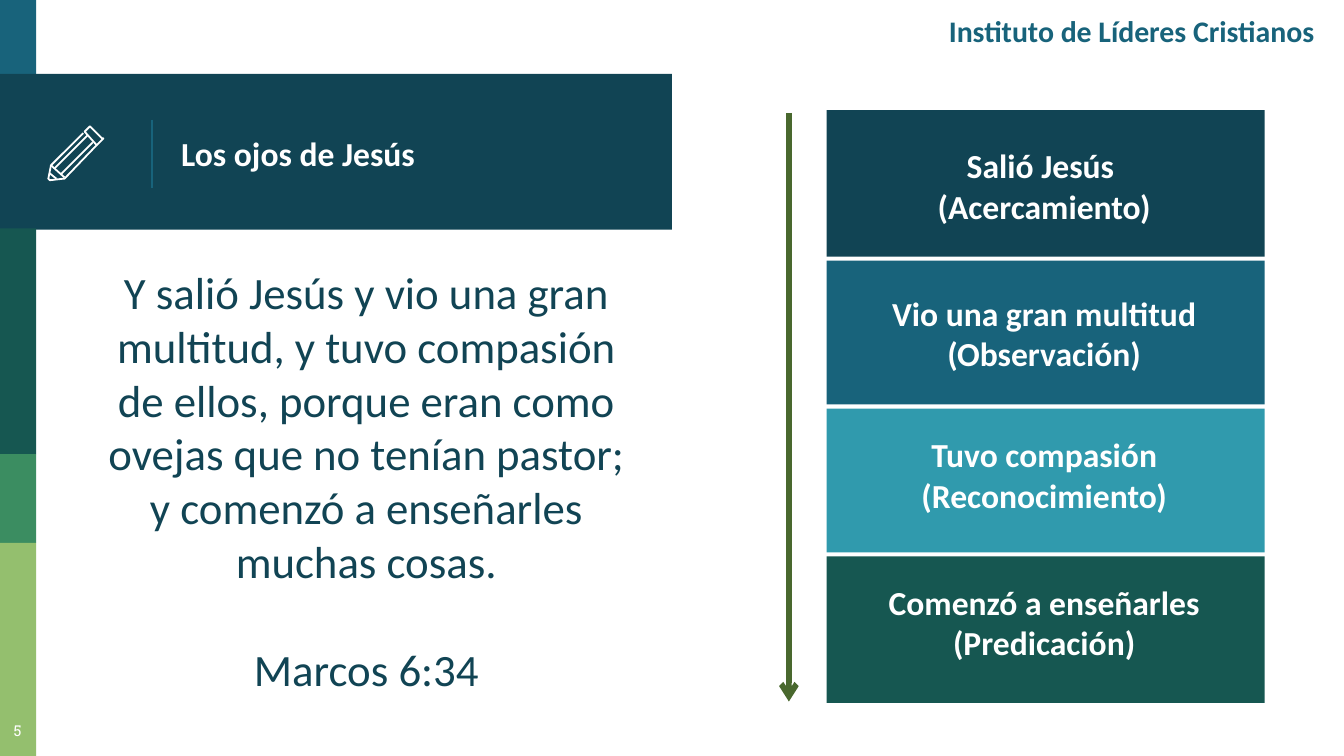
from pptx import Presentation
from pptx.dml.color import RGBColor
from pptx.enum.shapes import MSO_CONNECTOR, MSO_SHAPE
from pptx.enum.text import MSO_ANCHOR, PP_ALIGN
from pptx.oxml.ns import qn
from pptx.util import Inches, Pt
from lxml.etree import SubElement

THEME = {
    "navy": "114454", "blue": "18637B", "teal": "309AAD", "pine": "165751",
    "green": "3B8D61", "lime": "94BF6E", "olive": "49682E", "white": "FFFFFF",
    "font": "Calibri", "slab": "Roboto Slab",
    "verse": 24, "label": 18, "brand": 16, "page": 8,
}

TITLE = "Los ojos de Jesús"
BRAND = "Instituto de Líderes Cristianos"
PAGE = "5"
VERSE = [
    "Y salió Jesús y vio una gran multitud, y tuvo compasión de ellos, "
    "porque eran como ovejas que no tenían pastor; y comenzó a enseñarles "
    "muchas cosas.",
    "Marcos 6:34",
]
STEPS = [
    ("Salió Jesús ", "(Acercamiento)", "navy", 1.09, 0.82),
    ("Vio una gran multitud", "(Observación)", "blue", 1.07, 1.92),
    ("Tuvo compasión", "(Reconocimiento)", "teal", 1.07, 2.97),
    ("Comenzó a enseñarles", "(Predicación)", "pine", 1.09, 4.07),
]
BANDS = [
    ("blue", 0, 0.27, 0.58),
    ("navy", 0.55, 5, 1.16),
    ("pine", 1.7, 0.27, 1.68),
    ("green", 3.38, 0.27, 0.66),
    ("lime", 4.04, 0.27, 1.59),
]
PENCIL = [
    ([(0.76, 1.03), (0.68, 0.95), (0.67, 0.94), (0.66, 0.95), (0.63, 0.98),
      (0.72, 1.08), (0.76, 1.04), (0.77, 1.03)], True),
    ([(0.69, 1.06), (0.45, 1.3)], False),
    ([(0.62, 0.99), (0.38, 1.23), (0.36, 1.33), (0.37, 1.34), (0.38, 1.34),
      (0.47, 1.33), (0.48, 1.33), (0.72, 1.08)], False),
    ([(0.41, 1.25), (0.65, 1.01)], False),
    ([(0.42, 1.33), (0.37, 1.29)], False),
    ([(0.38, 1.23), (0.48, 1.32)], False),
]


def tint(name):
    return RGBColor.from_string(THEME[name])


def add_bar(slide, color, left, top, width, height):
    bar = slide.shapes.add_shape(
        MSO_SHAPE.RECTANGLE, *map(Inches, (left, top, width, height)))
    bar.shadow.inherit = False
    bar.fill.solid()
    bar.fill.fore_color.rgb = tint(color)
    bar.line.fill.background()


def add_text(slide, lines, area, size, color, bold=False, font="font",
             align=PP_ALIGN.CENTER, anchor=MSO_ANCHOR.MIDDLE, gap=0):
    frame = slide.shapes.add_textbox(*map(Inches, area)).text_frame
    frame.word_wrap = True
    frame.vertical_anchor = anchor
    frame.margin_left = frame.margin_right = Inches(0.1)
    frame.margin_top = frame.margin_bottom = Inches(0.1)
    for i, line in enumerate(lines):
        para = frame.add_paragraph() if i else frame.paragraphs[0]
        para.alignment = align
        if i and gap:
            para.space_before = Pt(gap)
        run = para.add_run()
        run.text = line
        run.font.name = THEME[font]
        run.font.size = Pt(THEME[size])
        run.font.bold = bold
        run.font.color.rgb = tint(color)


def add_line(slide, x, top, end, color, width):
    line = slide.shapes.add_connector(
        MSO_CONNECTOR.STRAIGHT, Inches(x), Inches(top), Inches(x), Inches(end))
    line.line.color.rgb = tint(color)
    line.line.width = Pt(width)
    SubElement(line._element.spPr, qn("a:effectLst"))
    return line


def add_pencil(slide):
    group = slide.shapes.add_group_shape()
    for points, closed in PENCIL:
        dots = [(Inches(x), Inches(y)) for x, y in points]
        pen = group.shapes.build_freeform(*dots[0])
        pen.add_line_segments(dots[1:], close=closed)
        part = pen.convert_to_shape()
        part.shadow.inherit = False
        part.fill.background()
        part.line.color.rgb = tint("white")
        part.line.width = Pt(0.96)


def add_steps(slide):
    top = 0.82
    for name, note, color, height, text_top in STEPS:
        add_bar(slide, color, 6.15, top, 3.26, height)
        add_text(slide, [name, note], (6.37, text_top, 2.8, 1.12),
                 "label", "white", bold=True)
        top += height + 0.03
    arrow = add_line(slide, 5.87, 0.84, 5.22, "olive", 3)
    SubElement(arrow.get_or_add_ln(), qn("a:tailEnd"), type="arrow")


def main():
    deck = Presentation()
    deck.slide_width = Inches(10)
    deck.slide_height = deck.slide_width * 9 // 16
    slide = deck.slides.add_slide(deck.slide_layouts[6])
    for color, top, width, height in BANDS:
        add_bar(slide, color, 0, top, width, height)
    add_line(slide, 1.13, 0.89, 1.4, "blue", 0.75)
    add_text(slide, [TITLE], (1.25, 0.58, 3.51, 1.12), "label", "white",
             bold=True, align=PP_ALIGN.LEFT)
    add_pencil(slide)
    add_text(slide, [PAGE], (-0.06, 5.3, 0.38, 0.32), "page", "white",
             font="slab", anchor=MSO_ANCHOR.TOP)
    add_text(slide, [BRAND], (6.18, 0, 3.7, 0.46), "brand", "blue",
             bold=True, align=PP_ALIGN.RIGHT)
    add_text(slide, VERSE, (0.65, 1.87, 4.15, 3.45), "verse", "navy",
             anchor=MSO_ANCHOR.TOP, gap=29)
    add_steps(slide)
    deck.save("out.pptx")


if __name__ == "__main__":
    main()
